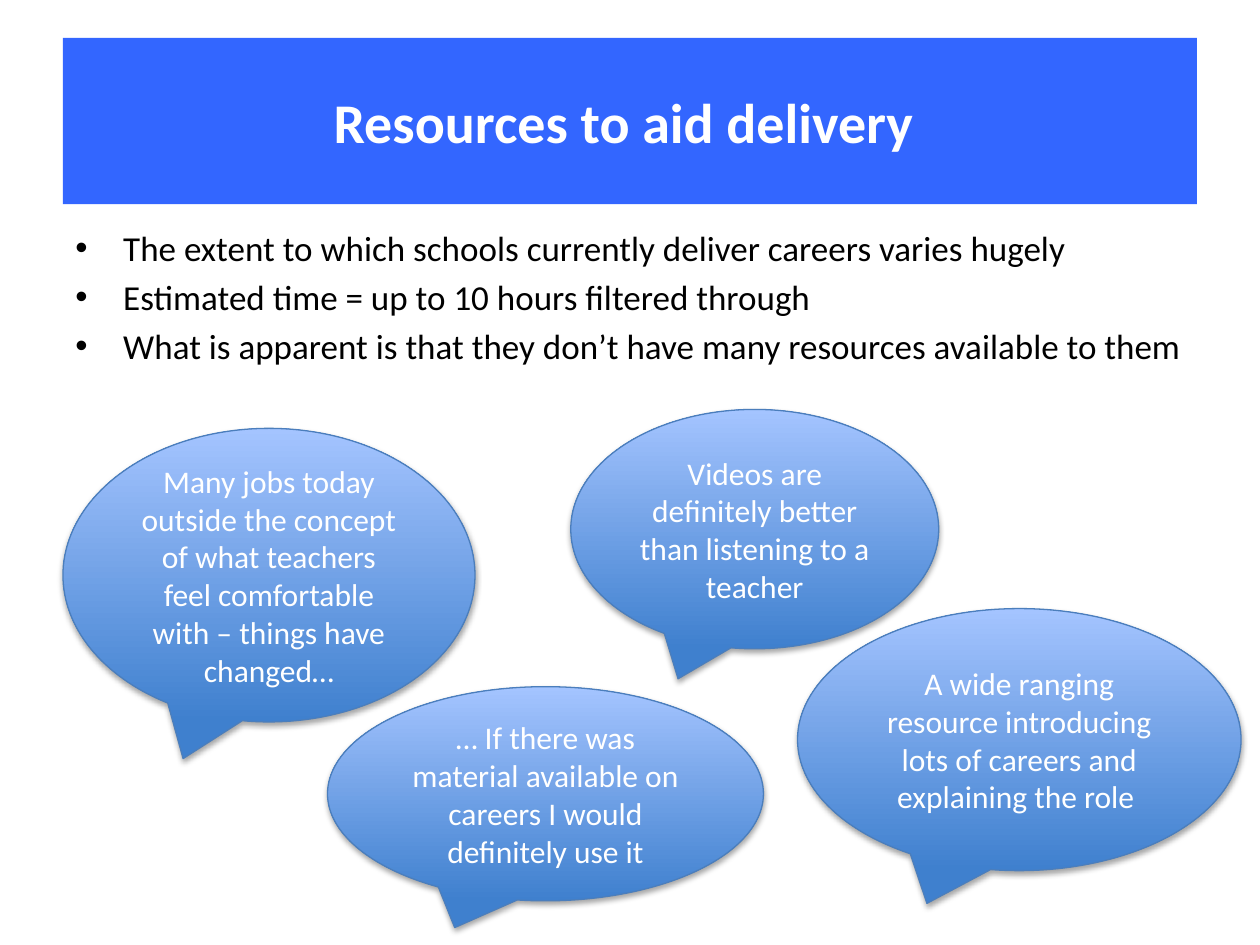
from dataclasses import dataclass

from lxml.etree import SubElement
from pptx import Presentation
from pptx.dml.color import RGBColor
from pptx.enum.shapes import MSO_SHAPE as Shape
from pptx.enum.text import MSO_ANCHOR as Anchor, PP_ALIGN as Align
from pptx.oxml.ns import qn
from pptx.util import Inches, Pt

BLUE = RGBColor(0x33, 0x66, 0xFF)
DARK = RGBColor(0x3F, 0x80, 0xCE)
LIGHT = RGBColor(0xA4, 0xC4, 0xFF)
EDGE = RGBColor(0x4B, 0x7E, 0xBC)
WHITE = RGBColor(0xFF, 0xFF, 0xFF)
BLACK = RGBColor(0, 0, 0)
FONT = "Calibri"


@dataclass
class Quote:
    left: float
    top: float
    width: float
    height: float
    text: str


POINTS = [
    "The extent to which schools currently deliver careers varies hugely",
    "Estimated time = up to 10 hours filtered through",
    "What is apparent is that they don’t have many resources available to them",
]
QUOTES = [
    Quote(0.5, 3.4, 3.27, 2.33, "Many jobs today outside the concept of what teachers "
          "feel comfortable with – things have changed…"),
    Quote(2.6, 5.45, 3.46, 1.7, "… If there was material available on careers "
          "I would definitely use it"),
    Quote(4.53, 3.25, 2.92, 1.9, "Videos are definitely better than listening to a teacher"),
    Quote(6.33, 4.83, 3.52, 2.08, "A wide ranging resource introducing lots of careers "
          "and explaining the role "),
]


def add_run(para, text: str, size: int, color: RGBColor, bold: bool = False) -> None:
    run = para.add_run()
    run.text = text
    font = run.font
    font.name, font.size, font.bold = FONT, Pt(size), bold
    font.color.rgb = color


def add_label(shape, text: str, size: int, bold: bool = False) -> None:
    """Centre white text in a shape."""
    frame = shape.text_frame
    frame.word_wrap = True
    frame.vertical_anchor = Anchor.MIDDLE
    para = frame.paragraphs[0]
    para.alignment = Align.CENTER
    add_run(para, text, size, WHITE, bold)


def add_title(slide, text: str) -> None:
    bar = slide.shapes.add_shape(
        Shape.RECTANGLE, Inches(0.5), Inches(0.3), Inches(9), Inches(1.32))
    bar.shadow.inherit = False
    bar.fill.solid()
    bar.fill.fore_color.rgb = BLUE
    bar.line.fill.background()
    add_label(bar, text, 32, True)


def add_points(slide, points: list[str]) -> None:
    box = slide.shapes.add_textbox(Inches(0.5), Inches(1.75), Inches(9), Inches(4.95))
    frame = box.text_frame
    frame.word_wrap = True
    for i, text in enumerate(points):
        para = frame.add_paragraph() if i else frame.paragraphs[0]
        para.space_before = Pt(4)
        props = para._p.get_or_add_pPr()
        props.set("marL", str(Inches(0.38)))
        props.set("indent", str(-Inches(0.38)))
        SubElement(props, qn("a:buFont"), typeface="Arial")
        SubElement(props, qn("a:buChar"), char="•")
        add_run(para, text, 20, BLACK)


def add_shadow(shape) -> None:
    """Give a shape a soft shadow just below it."""
    shape.shadow.inherit = False
    effects = shape._element.spPr.find(qn("a:effectLst"))
    outer = SubElement(effects, qn("a:outerShdw"), blurRad=str(Pt(3.1)),
                       dist=str(Pt(1.8)), dir="5400000", rotWithShape="0")
    color = SubElement(outer, qn("a:srgbClr"), val="000000")
    SubElement(color, qn("a:alpha"), val="35000")


def add_quote(slide, quote: Quote) -> None:
    bubble = slide.shapes.add_shape(
        Shape.OVAL_CALLOUT, Inches(quote.left), Inches(quote.top),
        Inches(quote.width), Inches(quote.height))
    fill = bubble.fill
    fill.gradient()
    fill.gradient_angle = 90
    for stop, color in zip(fill.gradient_stops, (DARK, LIGHT)):
        stop.color.rgb = color
    bubble.line.color.rgb = EDGE
    bubble.line.width = Pt(0.75)
    add_shadow(bubble)
    add_label(bubble, quote.text, 18)


def main() -> None:
    deck = Presentation()
    deck.slide_width, deck.slide_height = Inches(10), Inches(7.5)
    slide = deck.slides.add_slide(deck.slide_layouts[6])
    add_title(slide, "Resources to aid delivery ")
    add_points(slide, POINTS)
    for quote in QUOTES:
        add_quote(slide, quote)
    deck.save("out.pptx")


if __name__ == "__main__":
    main()
